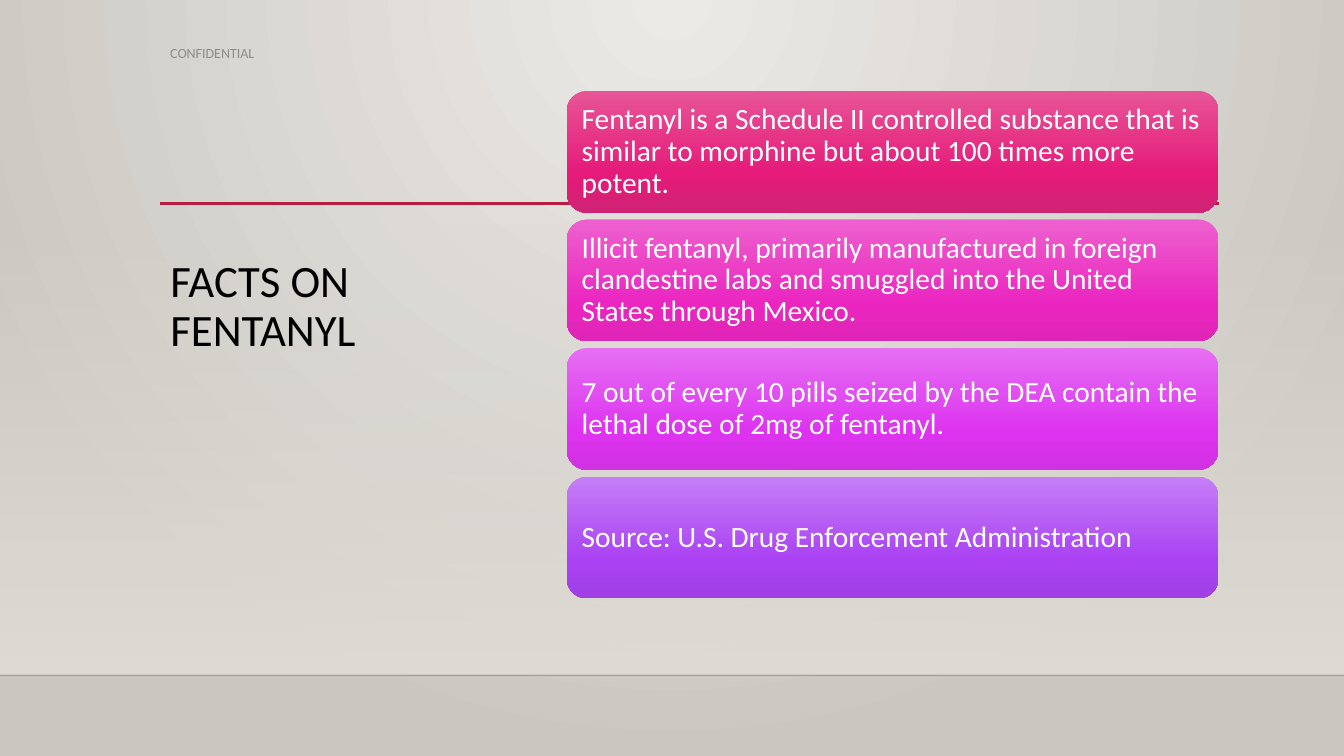
from lxml import etree
from pptx import Presentation
from pptx.dml.color import RGBColor
from pptx.enum import shapes, text
from pptx.oxml import parse_xml
from pptx.oxml.ns import nsdecls, qn
from pptx.util import Cm, Pt


def paint(font, size, tint):
    font.name, font.size = "Calibri", Pt(size)
    font.color.rgb = RGBColor.from_string(tint)


def blend(root, stops, shade='<a:lin ang="5400000" scaled="0"/>'):
    """Swap the default gradient under root for the given stops."""
    marks = "".join(
        f'<a:gs pos="{pos * 1000}"><a:srgbClr val="{tint}">'
        f'<a:alpha val="{alpha * 1000}"/></a:srgbClr></a:gs>'
        for pos, tint, alpha in stops)
    old = root.find(".//" + qn("a:gradFill"))
    old.getparent().replace(old, parse_xml(
        f'<a:gradFill {nsdecls("a")} rotWithShape="1">'
        f'<a:gsLst>{marks}</a:gsLst>{shade}</a:gradFill>'))


deck = Presentation()
deck.slide_width, deck.slide_height = Cm(33.87), Cm(19.05)
slide = deck.slides.add_slide(deck.slide_layouts[5])
items = slide.shapes

# Background
slide.background.fill.gradient()
blend(slide.element, [(0, "ECEAE7", 100), (100, "CAC7C1", 100)],
      '<a:path path="circle"><a:fillToRect l="43000" r="43000" b="100000"/></a:path>')

# Wall fading in towards the floor
wall = items.add_shape(shapes.MSO_SHAPE.RECTANGLE, 0, Cm(5.61), Cm(33.87), Cm(11.4))
wall.shadow.inherit = False
wall.line.fill.background()
wall.fill.gradient()
blend(wall.element, [(0, "DFDBD5", 0), (100, "DFDBD5", 100)])

# Floor edge and red rule
for left, right, top, tint, width, alpha in [
        (0, 33.87, 17.02, "000001", 1, 20),
        (4.04, 30.73, 5.13, "B71E42", 2.5, 100)]:
    rule = items.add_connector(shapes.MSO_CONNECTOR.STRAIGHT,
                               Cm(left), Cm(top), Cm(right), Cm(top))
    rule.line.width = Pt(width)
    rule.line.color.rgb = RGBColor.from_string(tint)
    clr = rule.element.spPr.find(".//" + qn("a:srgbClr"))
    etree.SubElement(clr, qn("a:alpha")).set("val", str(alpha * 1000))
    etree.SubElement(rule.element.spPr, qn("a:effectLst"))

# Title, brought in front of the wall
title = items.title
wall.element.getparent().append(title.element)
title.left, title.top, title.width, title.height = Cm(4.04), Cm(6.4), Cm(9.09), Cm(7.42)
frame = title.text_frame
frame.text = "FACTS ON FENTANYL"
frame.word_wrap = True
frame.auto_size = text.MSO_AUTO_SIZE.NONE
frame.vertical_anchor = text.MSO_ANCHOR.TOP
para = frame.paragraphs[0]
para.alignment = text.PP_ALIGN.LEFT
para.line_spacing = 0.9
paint(para.font, 32, "000000")

# Fact bars
facts = [
    ("Fentanyl is a Schedule II controlled substance that is similar to morphine "
     "but about 100 times more potent.", "E75597", "E51A79", "CF2374"),
    ("Illicit fentanyl, primarily manufactured in foreign clandestine labs and "
     "smuggled into the United States through Mexico.", "ED61CE", "EB26C0", "DE25B6"),
    ("7 out of every 10 pills seized by the DEA contain the lethal dose of 2mg "
     "of fentanyl.", "E66FF3", "DD33F0", "D131E2"),
    ("Source: U.S. Drug Enforcement Administration", "C57FF7", "AA41F3", "A13FE5"),
]
for row, (fact, light, mid, dark) in enumerate(facts):
    bar = items.add_shape(shapes.MSO_SHAPE.ROUNDED_RECTANGLE,
                          Cm(14.28), Cm(2.29 + 3.24 * row), Cm(16.43), Cm(3.07))
    bar.shadow.inherit = False
    bar.line.fill.background()
    bar.fill.gradient()
    blend(bar.element, [(0, light, 100), (69, mid, 100), (100, dark, 100)])
    frame = bar.text_frame
    frame.text = fact
    frame.word_wrap = True
    frame.vertical_anchor = text.MSO_ANCHOR.MIDDLE
    frame.margin_left = frame.margin_right = Cm(0.23)
    frame.margin_top = frame.margin_bottom = Cm(0.23)
    para = frame.paragraphs[0]
    para.alignment = text.PP_ALIGN.LEFT
    para.line_spacing = 0.9
    paint(para.font, 21, "FFFFFF")

# Confidential label
label = items.add_textbox(Cm(4.04), Cm(0.91), Cm(16.48), Cm(0.86))
frame = label.text_frame
frame.text = "CONFIDENTIAL"
frame.word_wrap = True
frame.vertical_anchor = text.MSO_ANCHOR.MIDDLE
paint(frame.paragraphs[0].font, 10, "8C8C8C")

deck.save("out.pptx")
